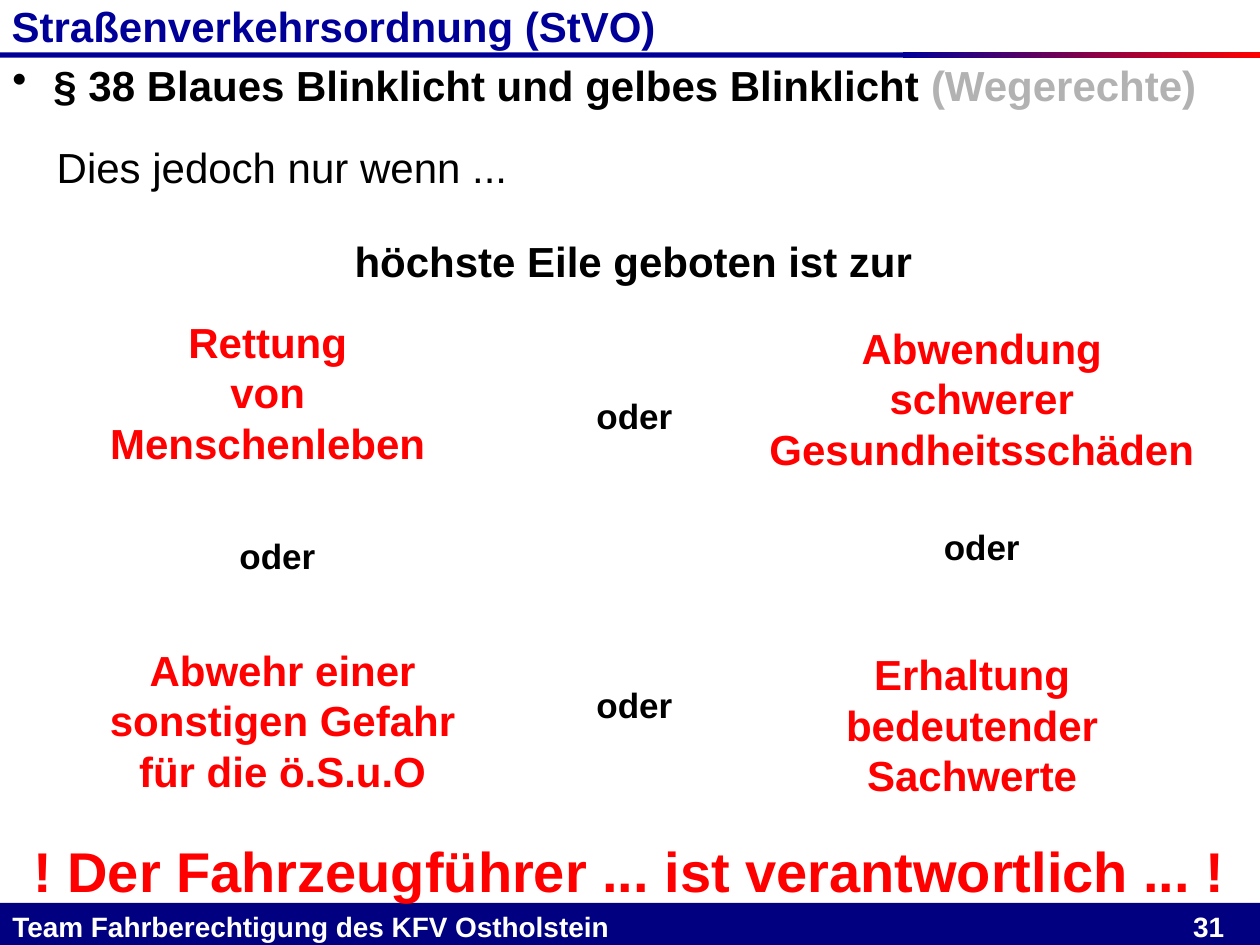
from pptx import Presentation
from pptx.dml.color import RGBColor
from pptx.enum.shapes import MSO_SHAPE
from pptx.enum.text import MSO_ANCHOR, PP_ALIGN
from pptx.oxml.ns import qn
from pptx.util import Pt
from lxml.etree import SubElement

COLORS = {
    "blue": "000099",
    "navy": "000080",
    "red": "FF0000",
    "black": "000000",
    "grey": "B2B2B2",
    "white": "FFFFFF",
}


def rgb(color):
    """Return the named colour."""
    return RGBColor.from_string(COLORS[color])


def apply_format(target, values):
    """Set every attribute named in values on target."""
    for attribute, value in values.items():
        setattr(target, attribute, value)


def style_font(font, color, size=24, bold=True):
    """Give a font its face, size, weight and colour."""
    apply_format(font, {"name": "Arial", "size": Pt(size), "bold": bold})
    font.color.rgb = rgb(color)


def add_bar(slide, left, top, width, height, *fill_colors):
    """Draw a bar with a plain fill, or a gradient for two colours."""
    bar = slide.shapes.add_shape(
        MSO_SHAPE.RECTANGLE, Pt(left), Pt(top), Pt(width), Pt(height))
    bar.shadow.inherit = False
    bar.line.fill.background()
    if len(fill_colors) == 1:
        bar.fill.solid()
        bar.fill.fore_color.rgb = rgb(fill_colors[0])
    else:
        bar.fill.gradient()
        bar.fill.gradient_angle = 0
        for stop, color in zip(bar.fill.gradient_stops, fill_colors):
            stop.color.rgb = rgb(color)
    return bar


def add_text(slide, box, text, color, size=24, bold=True,
             align=PP_ALIGN.LEFT, **frame_format):
    """Place text in a box and return its frame."""
    frame = slide.shapes.add_textbox(*map(Pt, box)).text_frame
    apply_format(frame, {"word_wrap": True, **frame_format})
    frame.text = text
    for paragraph in frame.paragraphs:
        paragraph.alignment = align
        for run in paragraph.runs:
            style_font(run.font, color, size, bold)
    return frame


def add_centred(slide, box, text, color, size=24):
    """Place bold text in the middle of a box without side margins."""
    add_text(slide, box, text, color, size, align=PP_ALIGN.CENTER,
             vertical_anchor=MSO_ANCHOR.MIDDLE, margin_left=0, margin_right=0)


def add_section_heading(slide):
    """Add the bulleted paragraph heading with its grey remark."""
    heading = add_text(slide, (0, 36, 720, 30),
                       "§ 38 Blaues Blinklicht und gelbes Blinklicht ", "black")
    paragraph = heading.paragraphs[0]
    paragraph.line_spacing = 0.8
    properties = paragraph._p.get_or_add_pPr()
    properties.set("marL", str(Pt(23.5)))
    properties.set("indent", str(-Pt(23.5)))
    SubElement(properties, qn("a:buChar"), char="•")
    style_font(paragraph.font, "black")
    remark = paragraph.add_run()
    remark.text = "(Wegerechte)"
    style_font(remark.font, "grey")


def add_footer(slide):
    """Add the footer bar with the team name and the page number."""
    frame = add_bar(slide, 0, 516, 720, 24, "navy").text_frame
    apply_format(frame, {"vertical_anchor": MSO_ANCHOR.TOP,
                         "margin_top": Pt(4), "margin_bottom": 0})
    paragraph = frame.paragraphs[0]
    paragraph.alignment = PP_ALIGN.LEFT
    tabs = SubElement(paragraph._p.get_or_add_pPr(), qn("a:tabLst"))
    SubElement(tabs, qn("a:tab"), pos=str(Pt(692.5)), algn="r")
    run = paragraph.add_run()
    run.text = "Team Fahrberechtigung des KFV Ostholstein\t31"
    style_font(run.font, "white", 16)


def main():
    """Build the slide on the right of way and save it."""
    presentation = Presentation()
    apply_format(presentation, {"slide_width": Pt(720), "slide_height": Pt(540)})
    slide = presentation.slides.add_slide(presentation.slide_layouts[6])

    add_bar(slide, 0, 30, 516, 3, "blue")
    add_bar(slide, 516, 30, 204, 3, "blue", "red")
    add_footer(slide)
    add_text(slide, (0, 0, 720, 29.5), "Straßenverkehrsordnung (StVO)", "blue",
             margin_left=Pt(6.7), margin_top=0, margin_right=0, margin_bottom=0)
    add_section_heading(slide)
    add_text(slide, (25.3, 77.3, 295, 36), "Dies jedoch nur wenn ...", "black",
             bold=False)
    add_centred(slide, (197, 134, 330, 30), "höchste Eile geboten ist zur", "black")

    reasons = [
        ((48, 179, 210, 90), "Rettung\vvon\nMenschenleben"),
        ((434, 185, 254, 85), "Abwendung\vschwerer\nGesundheitsschäden"),
        ((56, 366.5, 211, 90), "Abwehr einer\nsonstigen Gefahr\vfür die ö.S.u.O"),
        ((451, 372, 209, 84), "Erhaltung\nbedeutender\nSachwerte"),
    ]
    for box, reason in reasons:
        add_centred(slide, box, reason, "red")
    for left, top in [(337, 207), (133, 287), (535.5, 281.5), (337, 372)]:
        add_centred(slide, (left, top, 51, 61), "oder", "black", 20)

    add_text(slide, (0, 474.5, 720, 45),
             "! Der Fahrzeugführer ... ist verantwortlich ... !", "red", 32,
             align=PP_ALIGN.CENTER)
    presentation.save("out.pptx")


if __name__ == "__main__":
    main()
